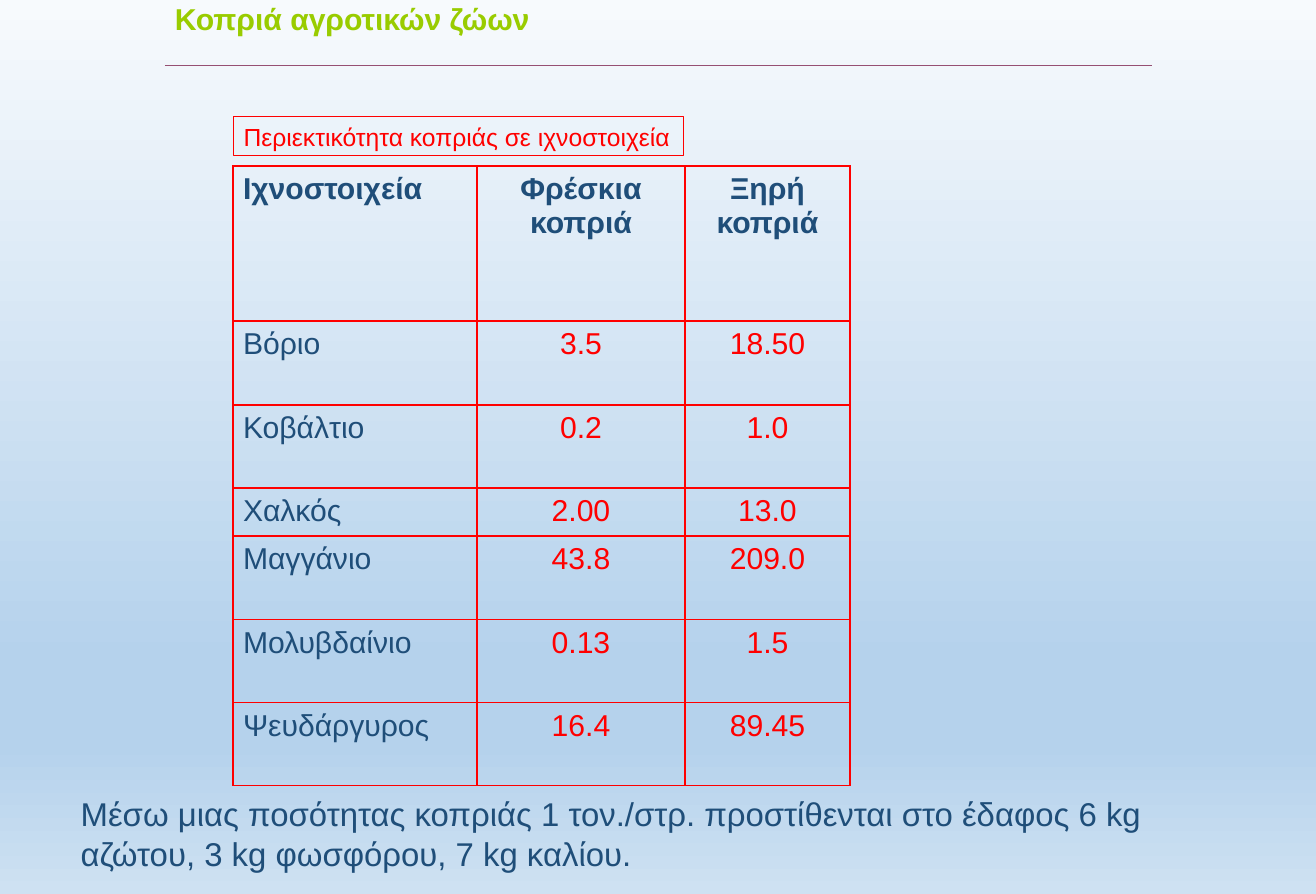
from dataclasses import dataclass
from typing import Any

from lxml import etree
from pptx import Presentation
from pptx import util as u
from pptx.dml.color import RGBColor
from pptx.enum import shapes, text
from pptx.oxml import parse_xml
from pptx.oxml.ns import nsdecls, qn

EMU_PER_PX = 9265
RED, NAVY, LIME, MAUVE = "FF0000", "1F4E79", "99CC00", "954F72"
BACKGROUND = [(0, "F7FAFD"), (74, "B5D2EC"), (83, "B5D2EC"), (100, "CEE1F2")]
COLUMNS = [244, 208, 165]
ROWS = [155, 84, 83, 48, 84, 83, 83]
CONTENT = [
    ("Ιχνοστοιχεία", "Φρέσκια κοπριά", "Ξηρή κοπριά"),
    ("Βόριο", "3.5", "18.50"),
    ("Κοβάλτιο", "0.2", "1.0"),
    ("Χαλκός", "2.00", "13.0"),
    ("Μαγγάνιο", "43.8", "209.0"),
    ("Μολυβδαίνιο", "0.13", "1.5"),
    ("Ψευδάργυρος", "16.4", "89.45"),
]


@dataclass
class Label:
    words: str
    left: int
    top: int
    width: int
    height: int
    size: int
    color: str
    bold: bool = False
    wrap: bool = False
    line_spacing: float = 1.0
    outline: str = ""


TITLE = Label("Κοπριά αγροτικών ζώων", 165, 0, 379, 42, 22, LIME,
              bold=True, line_spacing=0.9)
LABELS = [
    Label("Περιεκτικότητα κοπριάς σε ιχνοστοιχεία", 234, 117, 450, 39, 18, RED,
          outline=RED),
    Label("Μέσω μιας ποσότητας κοπριάς 1 τον./στρ. προστίθενται στο έδαφος 6 kg "
          "αζώτου, 3 kg φωσφόρου, 7 kg καλίου.", 71, 789, 1151, 90, 24, NAVY,
          wrap=True),
]


def px(count: int) -> u.Emu:
    return u.Emu(count * EMU_PER_PX)


def rgb(color: str) -> RGBColor:
    return RGBColor.from_string(color)


def assign(target: Any, values: dict[str, Any]) -> None:
    for name, value in values.items():
        setattr(target, name, value)


def write(para: Any, words: str, size: int, color: str, bold: bool,
          align: Any = text.PP_ALIGN.LEFT, line_spacing: float = 1.0) -> None:
    assign(para, {"alignment": align, "line_spacing": line_spacing})
    span = para.add_run()
    span.text = words
    assign(span.font, {"name": "Arial", "size": u.Pt(size), "bold": bold})
    span.font.color.rgb = rgb(color)


def paint_background(page: Any) -> None:
    stops = "".join(f'<a:gs pos="{place * 1000}"><a:srgbClr val="{color}"/></a:gs>'
                    for place, color in BACKGROUND)
    fill = parse_xml(f'<a:gradFill {nsdecls("a")} rotWithShape="1"><a:gsLst>{stops}'
                     '</a:gsLst><a:lin ang="5400000" scaled="0"/></a:gradFill>')
    page.background.fill.solid()
    properties = page._element.cSld.bg.bgPr
    properties.replace(properties[0], fill)


def fill_label(box: Any, label: Label) -> None:
    assign(box, {"left": px(label.left), "top": px(label.top),
                 "width": px(label.width), "height": px(label.height)})
    frame = box.text_frame
    assign(frame, {"word_wrap": label.wrap, "auto_size": text.MSO_AUTO_SIZE.NONE,
                   "vertical_anchor": text.MSO_ANCHOR.TOP})
    write(frame.paragraphs[0], label.words, label.size, label.color, label.bold,
          line_spacing=label.line_spacing)
    if label.outline:
        box.line.color.rgb = rgb(label.outline)
        box.line.width = u.Pt(0.75)


def add_rule(page: Any) -> None:
    rule = page.shapes.add_connector(shapes.MSO_CONNECTOR.STRAIGHT,
                                     px(165), px(66), px(1152), px(66))
    rule.line.color.rgb = rgb(MAUVE)
    rule.line.width = u.Pt(0.75)
    etree.SubElement(rule._element.spPr, qn("a:effectLst"))


def format_cell(cell: Any, words: str, row: int, column: int) -> None:
    assign(cell, {"margin_left": px(10), "margin_right": px(10),
                  "margin_top": px(6), "margin_bottom": px(6)})
    header = row == 0
    write(cell.text_frame.paragraphs[0], words, 22,
          RED if row and column else NAVY, header,
          text.PP_ALIGN.CENTER if column else text.PP_ALIGN.LEFT)
    cell.fill.background()
    properties = cell._tc.get_or_add_tcPr()
    for position, side in enumerate(("lnL", "lnR", "lnT", "lnB")):
        properties.insert(position, parse_xml(
            f'<a:{side} {nsdecls("a")} w="{u.Pt(1)}"><a:solidFill>'
            f'<a:srgbClr val="{RED}"/></a:solidFill></a:{side}>'))


def add_contents_table(page: Any) -> None:
    table = page.shapes.add_table(len(ROWS), len(COLUMNS), px(233), px(166),
                                  px(sum(COLUMNS)), px(sum(ROWS))).table
    assign(table, {"first_row": False, "horz_banding": False})
    for column, width in zip(table.columns, COLUMNS):
        column.width = px(width)
    for index, height in enumerate(ROWS):
        table.rows[index].height = px(height)
        for column, words in enumerate(CONTENT[index]):
            format_cell(table.cell(index, column), words, index, column)


def main() -> None:
    deck = Presentation()
    assign(deck, {"slide_width": px(1316), "slide_height": px(894)})
    page = deck.slides.add_slide(deck.slide_layouts.get_by_name("Title Only"))
    paint_background(page)
    add_rule(page)
    fill_label(page.shapes.title, TITLE)
    add_contents_table(page)
    for label in LABELS:
        fill_label(page.shapes.add_textbox(0, 0, 0, 0), label)
    deck.save("out.pptx")


if __name__ == "__main__":
    main()
